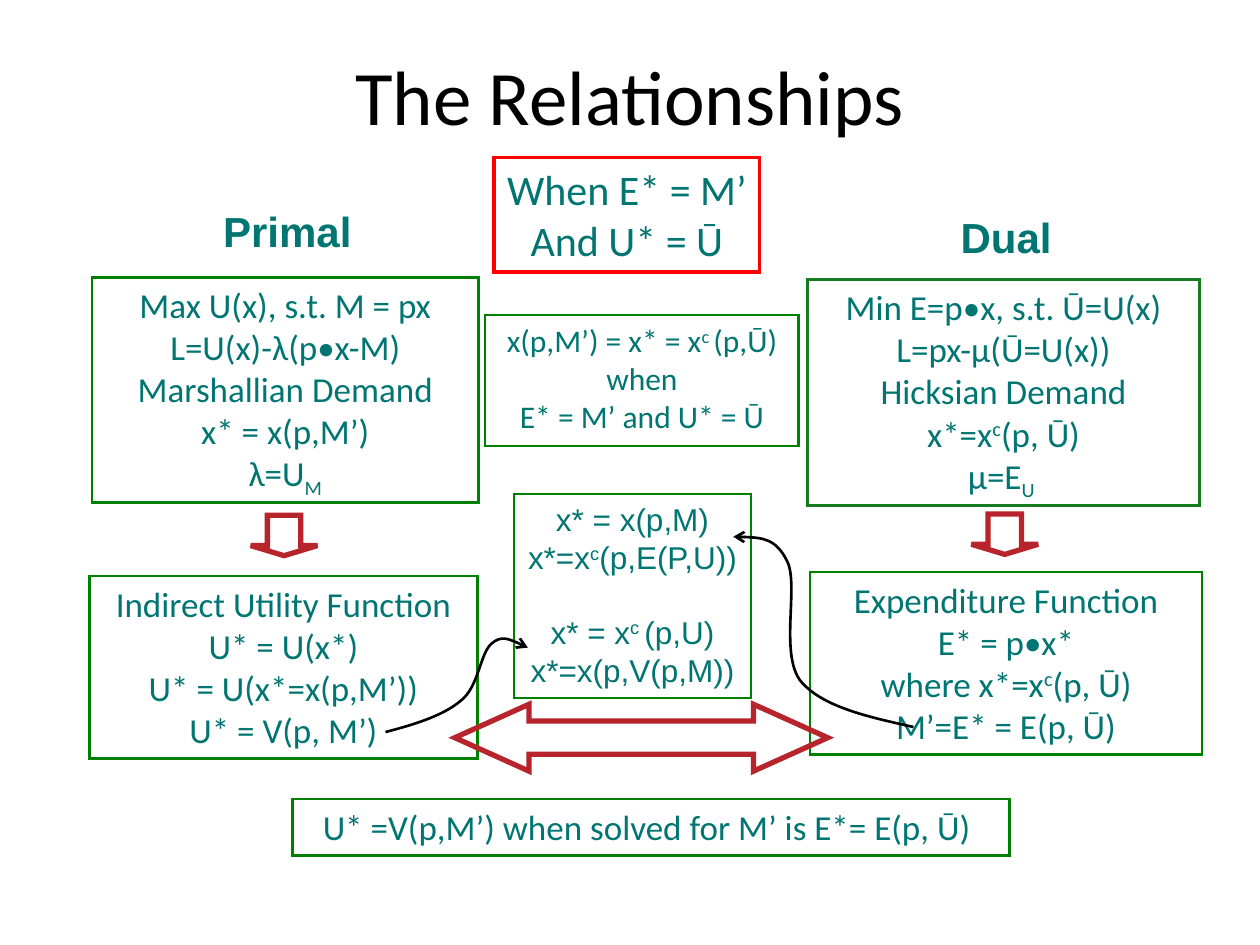
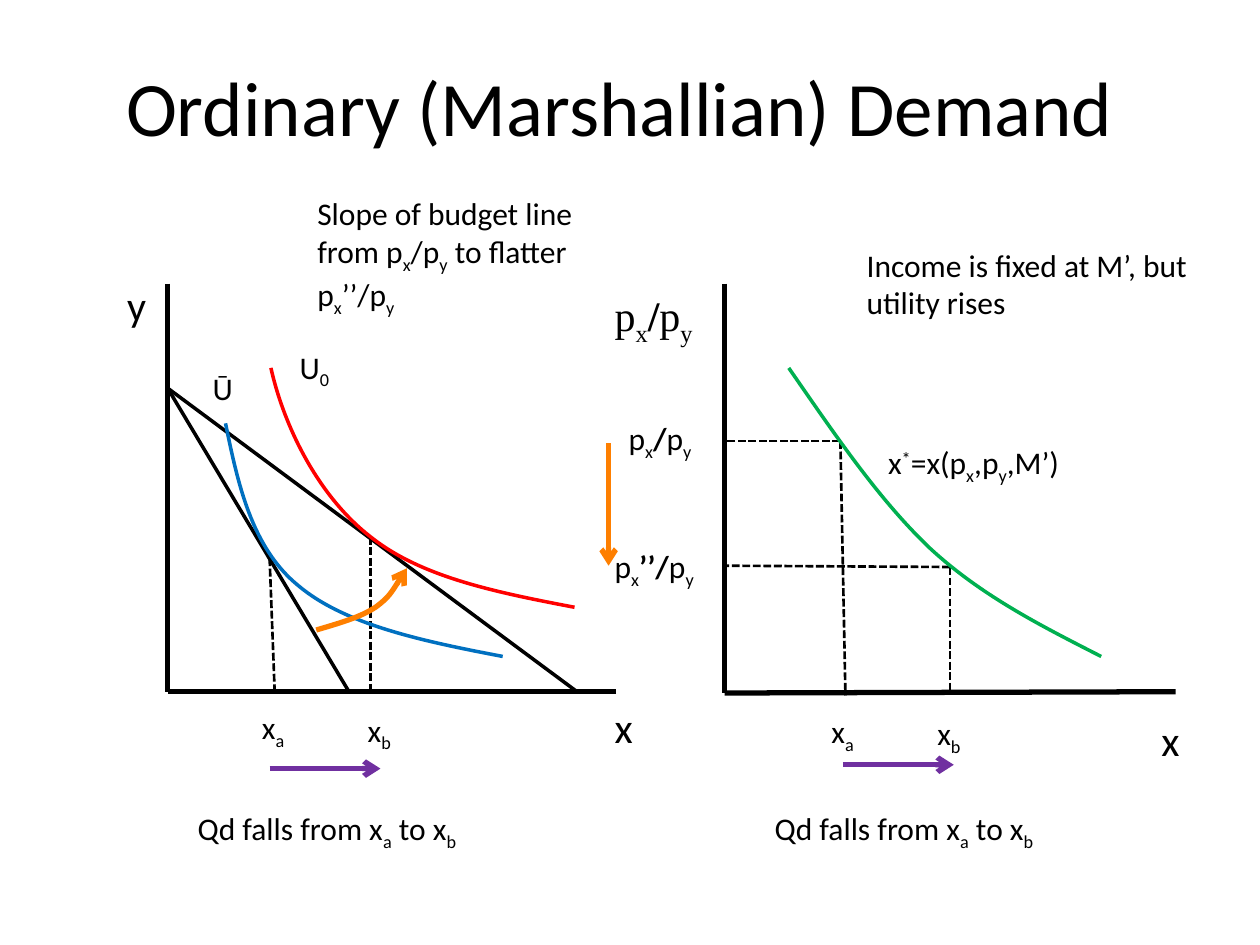
from dataclasses import dataclass

from lxml import etree
from pptx import Presentation
from pptx.dml.color import RGBColor
from pptx.enum.dml import MSO_LINE
from pptx.enum.shapes import MSO_CONNECTOR, MSO_SHAPE
from pptx.enum.text import MSO_ANCHOR, MSO_AUTO_SIZE, PP_ALIGN
from pptx.oxml.ns import qn
from pptx.util import Inches, Pt

RECT, DOWN, LEFT_RIGHT = MSO_SHAPE.RECTANGLE, MSO_SHAPE.DOWN_ARROW, MSO_SHAPE.LEFT_RIGHT_ARROW
STRAIGHT = MSO_CONNECTOR.STRAIGHT
DASH = MSO_LINE.SQUARE_DOT
MIDDLE, TOP = MSO_ANCHOR.MIDDLE, MSO_ANCHOR.TOP
CENTER, LEFT = PP_ALIGN.CENTER, PP_ALIGN.LEFT
FIT_SHAPE = MSO_AUTO_SIZE.SHAPE_TO_FIT_TEXT

BLACK = RGBColor(0x00, 0x00, 0x00)
TEAL = RGBColor(0x00, 0x75, 0x72)
GREEN = RGBColor(0x00, 0x80, 0x00)
DARK_GREEN = RGBColor(0x17, 0x7B, 0x21)
CRIMSON = RGBColor(0xB8, 0x24, 0x2B)
RED = RGBColor(0xFF, 0x00, 0x00)
BLUE = RGBColor(0x00, 0x70, 0xC0)
LEAF = RGBColor(0x00, 0xB0, 0x50)
ORANGE = RGBColor(0xFE, 0x7F, 0x00)
PURPLE = RGBColor(0x70, 0x30, 0xA0)

BODY_FONT, SANS, SERIF = "Calibri", "Arial", "Times New Roman"
BASELINES = {"_": "-25000", "^": "30000"}

Point = tuple[float, float]


@dataclass
class Box:
    at: tuple[float, float, float, float]
    lines: tuple[str, ...]
    size: int = 20
    border: RGBColor = GREEN
    weight: float = 1.5
    font: str = BODY_FONT
    wrap: bool = True
    gap_before: int | None = None


@dataclass
class Label:
    at: tuple[float, float, float, float]
    lines: tuple[str, ...]
    size: int = 18
    font: str = BODY_FONT
    color: RGBColor = BLACK
    bold: bool = False
    align: PP_ALIGN = LEFT
    wrap: bool = False


@dataclass
class Segment:
    start: Point
    end: Point
    color: RGBColor = BLACK
    weight: float = 3
    dashed: bool = False
    arrow: bool = False


@dataclass
class Curve:
    points: tuple[Point, ...]
    color: RGBColor
    weight: float = 2
    arrow: bool = False


def add_run(p, text: str, mark: str, color: RGBColor, formats: dict) -> None:
    r = p.add_run()
    r.text = text
    for name, value in formats.items():
        setattr(r.font, name, value)
    r.font.color.rgb = color
    if mark == "!":
        r.font.bold = True
    elif mark:
        r._r.get_or_add_rPr().set("baseline", BASELINES[mark])


def write_lines(tf, lines: tuple[str, ...], color: RGBColor, align: PP_ALIGN, formats: dict) -> None:
    for i, line in enumerate(lines):
        p = tf.paragraphs[0] if i == 0 else tf.add_paragraph()
        p.alignment = align
        plain, *marked = line.split("{")
        pieces = [(plain, "")]
        for part in marked:
            inside, after = part.split("}")
            pieces += [(inside[1:], inside[0]), (after, "")]
        for text, mark in pieces:
            if text:
                add_run(p, text, mark, color, formats)


def style_line(sp, color: RGBColor, weight: float, dashed: bool = False, arrow: bool = False) -> None:
    sp.line.color.rgb = color
    sp.line.width = Pt(weight)
    if dashed:
        sp.line.dash_style = DASH
    ln = sp.element.spPr.find(qn("a:ln"))
    etree.SubElement(ln, qn("a:miter"), lim="800000")
    if arrow:
        etree.SubElement(ln, qn("a:tailEnd"), type="arrow")


def outline(sp, color: RGBColor, weight: float, arrow: bool = False) -> None:
    sp.fill.background()
    sp.shadow.inherit = False
    style_line(sp, color, weight, arrow=arrow)


def add_titled_slide(prs, title: str, at: tuple[float, float, float, float]):
    s = prs.slides.add_slide(prs.slide_layouts[5])
    sp = s.shapes.title
    sp.left, sp.top, sp.width, sp.height = map(Inches, at)
    sp.text_frame.vertical_anchor = MIDDLE
    write_lines(sp.text_frame, (title,), BLACK, CENTER, {"size": Pt(44), "name": BODY_FONT})
    return s


def draw_box(s, box: Box) -> None:
    sp = s.shapes.add_shape(RECT, *map(Inches, box.at))
    outline(sp, box.border, box.weight)
    tf = sp.text_frame
    tf.word_wrap = box.wrap
    tf.auto_size = FIT_SHAPE
    tf.vertical_anchor = TOP
    write_lines(tf, box.lines, TEAL, CENTER, {"size": Pt(box.size), "name": box.font})
    if box.gap_before is not None:
        tf.paragraphs[box.gap_before].space_before = Pt(box.size * 1.18)


def draw_label(s, label: Label) -> None:
    tf = s.shapes.add_textbox(*map(Inches, label.at)).text_frame
    tf.word_wrap = label.wrap
    tf.auto_size = FIT_SHAPE
    formats = {"size": Pt(label.size), "name": label.font, "bold": label.bold}
    write_lines(tf, label.lines, label.color, label.align, formats)


def draw_segment(s, seg: Segment) -> None:
    sp = s.shapes.add_connector(STRAIGHT, *map(Inches, seg.start + seg.end))
    style_line(sp, seg.color, seg.weight, seg.dashed, seg.arrow)
    etree.SubElement(sp.element.spPr, qn("a:effectLst"))


def draw_curve(s, curve: Curve) -> None:
    start, *controls = [(Inches(x), Inches(y)) for x, y in curve.points]
    builder = s.shapes.build_freeform(*start)
    builder.add_line_segments(controls, close=False)
    sp = builder.convert_to_shape()
    outline(sp, curve.color, curve.weight, curve.arrow)
    track = next(sp.element.iter(qn("a:path")))
    steps = track.findall(qn("a:lnTo"))
    for i in range(0, len(steps), 3):
        bend = etree.SubElement(track, qn("a:cubicBezTo"))
        for step in steps[i:i + 3]:
            bend.append(step[0])
            track.remove(step)


def draw_block_arrow(s, kind: MSO_SHAPE, at: tuple[float, float, float, float], head: float) -> None:
    sp = s.shapes.add_shape(kind, *map(Inches, at))
    sp.adjustments[0] = 0.5
    sp.adjustments[1] = head
    outline(sp, CRIMSON, 3)


def build_relationships(prs) -> None:
    s = add_titled_slide(prs, "The Relationships", (0.75, 0.33, 8.5, 0.84))
    for text, at in (("Primal", (0.82, 1.58, 2.92, 0.5)), ("Dual", (7.09, 1.63, 1.79, 0.5))):
        draw_label(s, Label(at, (text,), 24, SANS, TEAL, True, CENTER, True))
    for box in (
        Box((0.73, 2.2, 3.07, 1.79), (
            "Max U(x), s.t. M = px", "L=U(x)-λ(p•x-M)", "Marshallian Demand",
            "x* = x(p,M’)", "λ=U{_M}")),
        Box((6.41, 2.22, 3.11, 1.79), (
            "Min E=p•x, s.t. Ū=U(x)", "L=px-μ(Ū=U(x))", "Hicksian Demand",
            "x*=x{^c}(p, Ū)", "μ=E{_U }"), border=DARK_GREEN),
        Box((0.71, 4.57, 3.08, 1.45), (
            "Indirect Utility Function", "U* = U(x*)", "U* = U(x*=x(p,M’))", "U* = V(p, M’)")),
        Box((6.43, 4.54, 3.11, 1.45), (
            "Expenditure Function", "E* = p•x*", "where x*=x{^c}(p, Ū)", "M’=E* = E(p, Ū)")),
        Box((2.32, 6.34, 5.69, 0.45), ("U* =V(p,M’) when solved for M’ is E*= E(p, Ū) ",)),
        Box((3.85, 2.5, 2.49, 1.04), (
            "x(p,M’) = x* = x{^c }(p,Ū)", "when", "E* = M’ and U* = Ū"), 18),
        Box((3.92, 1.25, 2.11, 0.91), ("When E* = M’", "And U* = Ū"), 24, RED, 2, wrap=False),
        Box((4.08, 3.92, 1.88, 1.62), (
            "x* = x(p,M)", "x*=x{^c}(p,E(P,U))", "x* = x{^c }(p,U)", "x*=x(p,V(p,M))"),
            18, font=SANS, gap_before=2),
    ):
        draw_box(s, box)
    draw_block_arrow(s, DOWN, (1.99, 4.09, 0.53, 0.32), 0.25)
    draw_block_arrow(s, DOWN, (7.71, 4.08, 0.53, 0.32), 0.25)
    draw_block_arrow(s, LEFT_RIGHT, (3.61, 5.59, 2.96, 0.53), 1.11)
    for points in (
        ((3.06, 5.81), (3.29, 5.75), (3.52, 5.68), (3.66, 5.56), (3.8, 5.45),
         (3.81, 5.19), (3.9, 5.11), (3.98, 5.04), (4.09, 5.09), (4.19, 5.14)),
        ((7.25, 5.77), (6.89, 5.69), (6.52, 5.61), (6.35, 5.4), (6.19, 5.18),
         (6.34, 4.65), (6.25, 4.46), (6.16, 4.27), (5.99, 4.26), (5.82, 4.26)),
    ):
        draw_curve(s, Curve(points, BLACK, 1.5, True))


def build_demand(prs) -> None:
    s = add_titled_slide(prs, "Ordinary (Marshallian) Demand", (0.58, 0.25, 8.68, 1.17))
    axes = (
        ((1.33, 2.25), (1.33, 5.49)), ((4.89, 5.49), (1.33, 5.49)),
        ((5.75, 2.25), (5.75, 5.5)), ((9.33, 5.49), (5.75, 5.5)),
    )
    budget_lines = (((1.33, 3.08), (4.58, 5.49)), ((1.33, 3.08), (2.77, 5.49)))
    guides = (
        ((2.94, 4.26), (2.94, 5.48)), ((2.14, 4.43), (2.18, 5.49)),
        ((7.54, 4.5), (7.54, 5.5)), ((6.67, 3.5), (6.71, 5.52)),
        ((6.67, 3.5), (5.75, 3.5)), ((7.54, 4.5), (5.75, 4.49)),
    )
    for ends, weight, dashed in ((axes, 3, False), (budget_lines, 2, False), (guides, 1.5, True)):
        for start, end in ends:
            draw_segment(s, Segment(start, end, weight=weight, dashed=dashed))
    for curve in (
        Curve(((1.79, 3.36), (1.89, 3.85), (2, 4.35), (2.37, 4.65),
               (2.74, 4.96), (3.36, 5.09), (3.99, 5.21)), BLUE),
        Curve(((2.15, 2.92), (2.26, 3.41), (2.54, 3.95), (2.94, 4.26),
               (3.34, 4.58), (3.93, 4.7), (4.56, 4.82)), RED),
        Curve(((6.26, 2.92), (6.62, 3.44), (6.97, 3.96), (7.38, 4.35),
               (7.79, 4.73), (8.27, 4.97), (8.74, 5.21)), LEAF),
        Curve(((2.51, 5), (2.68, 4.95), (2.86, 4.9), (2.98, 4.82),
               (3.09, 4.74), (3.16, 4.62), (3.23, 4.51)), ORANGE, 3, True),
    ):
        draw_curve(s, curve)
    draw_segment(s, Segment((4.83, 3.52), (4.83, 4.49), ORANGE, arrow=True))
    for label in (
        Label((0.91, 2.17, 0.35, 0.5), ("y",), 24),
        Label((4.78, 5.52, 0.3, 0.5), ("x",), 24, wrap=True),
        Label((9.12, 5.62, 0.3, 0.5), ("x",), 24, wrap=True),
        Label((1.59, 2.88, 0.36, 0.4), ("Ū",)),
        Label((2.28, 2.71, 0.45, 0.4), ("U{_0}",)),
        Label((6.95, 3.47, 1.59, 0.4), ("x{^*}=x(p{_x},p{_y},M’)",)),
        Label((4.78, 2.25, 0.97, 0.5), ("p{_x}{!/}p{_y}",), 24, SERIF, wrap=True),
        Label((4.89, 3.28, 0.76, 0.4), ("p{_x}{!/}p{_y}",), wrap=True),
        Label((4.78, 4.29, 0.91, 0.4), ("p{_x}{!’’/}p{_y}",), wrap=True),
        Label((2.42, 1.49, 2.26, 1.01),
              ("Slope of budget line from p{_x}/p{_y} to flatter p{_x}’’/p{_y}",), wrap=True),
        Label((6.78, 1.9, 2.85, 0.71), ("Income is fixed at M’, but", "utility rises")),
    ):
        draw_label(s, label)
    for left, top, arrow_left, arrow_top, caption_left in (
        (1.98, 5.57, 2.14, 6.1, 1.47), (6.5, 5.6, 6.69, 6.07, 6.05),
    ):
        draw_label(s, Label((left, top, 0.39, 0.4), ("x{_a}",)))
        draw_label(s, Label((left + 0.84, top + 0.02, 0.41, 0.4), ("x{_b}",)))
        draw_segment(s, Segment((arrow_left, arrow_top), (arrow_left + 0.88, arrow_top), PURPLE, arrow=True))
        draw_label(s, Label((caption_left, 6.37, 2.65, 0.4), ("Qd falls from x{_a} to x{_b}",), wrap=True))


def main() -> None:
    prs = Presentation()
    prs.slide_width, prs.slide_height = Inches(10), Inches(7.5)
    build_relationships(prs)
    build_demand(prs)
    prs.save("out.pptx")


if __name__ == "__main__":
    main()
